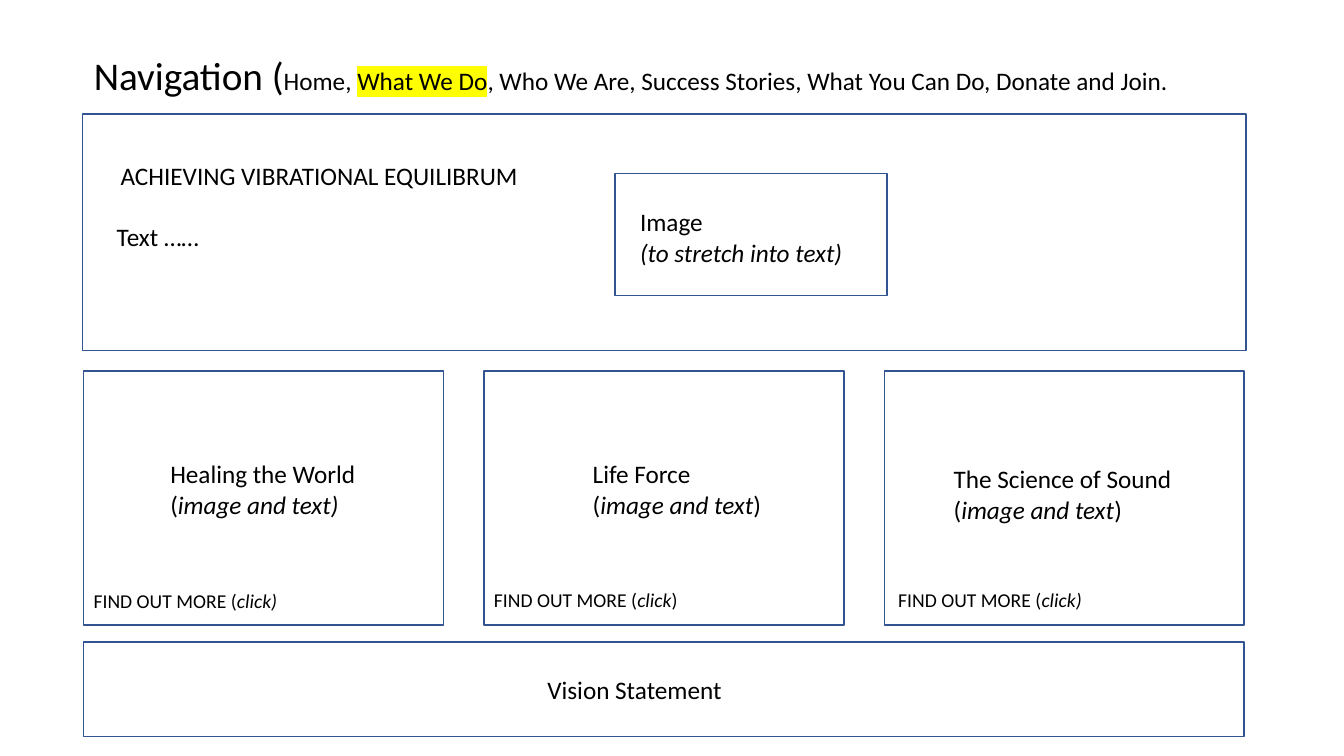
from dataclasses import dataclass

from lxml import etree
from pptx import Presentation
from pptx.dml.color import RGBColor
from pptx.enum.shapes import MSO_SHAPE
from pptx.enum.text import MSO_ANCHOR, MSO_AUTO_SIZE, PP_ALIGN
from pptx.oxml.ns import qn
from pptx.util import Pt

EMU_PER_PX = 9144
RECTANGLE = MSO_SHAPE.RECTANGLE
LEFT, CENTER = PP_ALIGN.LEFT, PP_ALIGN.CENTER
MIDDLE = MSO_ANCHOR.MIDDLE
FIT_SHAPE, NO_FIT = MSO_AUTO_SIZE.SHAPE_TO_FIT_TEXT, MSO_AUTO_SIZE.NONE
TITLE_ONLY = 5
ITALIC = {"italic": True}


@dataclass(frozen=True)
class Theme:
    font: str = "Calibri"
    text: RGBColor = RGBColor(0, 0, 0)
    outline: RGBColor = RGBColor(0x32, 0x54, 0x91)
    highlight: str = "FFFF00"
    title_size: int = 28
    body_size: int = 18
    link_size: int = 14
    outline_width: int = 1


def px(*lengths):
    return [length * EMU_PER_PX for length in lengths]


def apply_format(target, values):
    for name, value in values.items():
        setattr(target, name, value)


class Wireframe:
    """Holds the theme and the slide that elements are added to."""

    def __init__(self, slide, theme):
        self.slide = slide
        self.theme = theme

    def box(self, left, top, width, height):
        shape = self.slide.shapes.add_shape(RECTANGLE, *px(left, top, width, height))
        shape.shadow.inherit = False
        shape.fill.background()
        shape.line.color.rgb = self.theme.outline
        shape.line.width = Pt(self.theme.outline_width)

    def add_run(self, paragraph, text, size, values):
        run = paragraph.add_run()
        run.text = text
        run.font.color.rgb = self.theme.text
        apply_format(run.font, {"name": self.theme.font, "size": Pt(size), **values})
        return run

    def highlight(self, run):
        fill = run.font._element.find(qn("a:solidFill"))
        mark = etree.Element(qn("a:highlight"))
        etree.SubElement(mark, qn("a:srgbClr"), val=self.theme.highlight)
        fill.addnext(mark)

    def navigation(self, left, top, width, height, label, before, current, after):
        """Fill the title with the menu and mark its current entry."""
        title = self.slide.shapes.title
        position = px(left, top, width, height)
        apply_format(title, dict(zip(("left", "top", "width", "height"), position)))
        apply_format(title.text_frame, {
            "vertical_anchor": MIDDLE, "word_wrap": True, "auto_size": NO_FIT})
        paragraph = title.text_frame.paragraphs[0]
        apply_format(paragraph, {"alignment": LEFT, "line_spacing": 0.9, "space_before": Pt(10)})
        self.add_run(paragraph, label, self.theme.title_size, {})
        _, entry, _ = [self.add_run(paragraph, text, self.theme.body_size, {})
                       for text in (before, current, after)]
        self.highlight(entry)

    def text(self, left, top, width, height, lines, size=None, wrap=False):
        """Add lines, each a pair of its runs and its paragraph format."""
        text_box = self.slide.shapes.add_textbox(*px(left, top, width, height))
        frame = text_box.text_frame
        apply_format(frame, {"word_wrap": wrap, "auto_size": FIT_SHAPE})
        for index, (runs, paragraph_format) in enumerate(lines):
            paragraph = frame.add_paragraph() if index else frame.paragraphs[0]
            apply_format(paragraph, paragraph_format)
            for text, values in runs:
                self.add_run(paragraph, text, size or self.theme.body_size, values)


def bracketed(prefix, words, upright_close):
    """Return runs with italic words, whose closing bracket may be upright."""
    if upright_close:
        return [(prefix + "(", {}), (words, ITALIC), (")", {})]
    return [(prefix + "(", {}), (words + ")", ITALIC)]


def main():
    presentation = Presentation()
    presentation.slide_width, presentation.slide_height = px(1333, 750)
    slide = presentation.slides.add_slide(presentation.slide_layouts[TITLE_ONLY])
    theme = Theme()
    wireframe = Wireframe(slide, theme)

    wireframe.navigation(
        83, 45, 1138, 64, "Navigation (", "Home, ", "What We Do",
        ", Who We Are, Success Stories, What You Can Do, Donate and Join.")

    wireframe.box(82, 113, 1154, 235)
    wireframe.text(106, 154, 427, 131, [
        ([("ACHIEVING VIBRATIONAL EQUILIBRUM ", {})],
         {"alignment": CENTER, "space_after": Pt(22)}),
        ([("Text ……", {})], {}),
    ])
    wireframe.box(610, 172, 270, 121)
    wireframe.text(625, 200, 226, 71, [
        ([("Image", {})], {}),
        ([("(to stretch into text)", ITALIC)], {}),
    ])

    # Topic, its position and width, link position, upright closing brackets
    cards = [
        ("Healing the World", 159, 450, 209, 83, 579, False, False),
        ("Life Force", 578, 450, 188, 480, 578, True, True),
        ("The Science of Sound", 936, 455, 247, 881, 578, True, False),
    ]
    for column, card in enumerate(cards):
        topic, left, top, width, link_left, link_top, topic_upright, link_upright = card
        wireframe.box(83 + 397 * column, 368, 357, 252)
        wireframe.text(left, top, width, 71, [
            ([(topic, {})], {}),
            (bracketed("", "image and text", topic_upright), {}),
        ])
        wireframe.text(link_left, link_top, 315, 34, [
            (bracketed("FIND OUT MORE ", "click", link_upright), {}),
        ], theme.link_size, wrap=True)

    wireframe.box(83, 637, 1151, 94)
    wireframe.text(533, 664, 195, 40, [([("Vision Statement", {})], {})])

    presentation.save("out.pptx")


if __name__ == "__main__":
    main()
